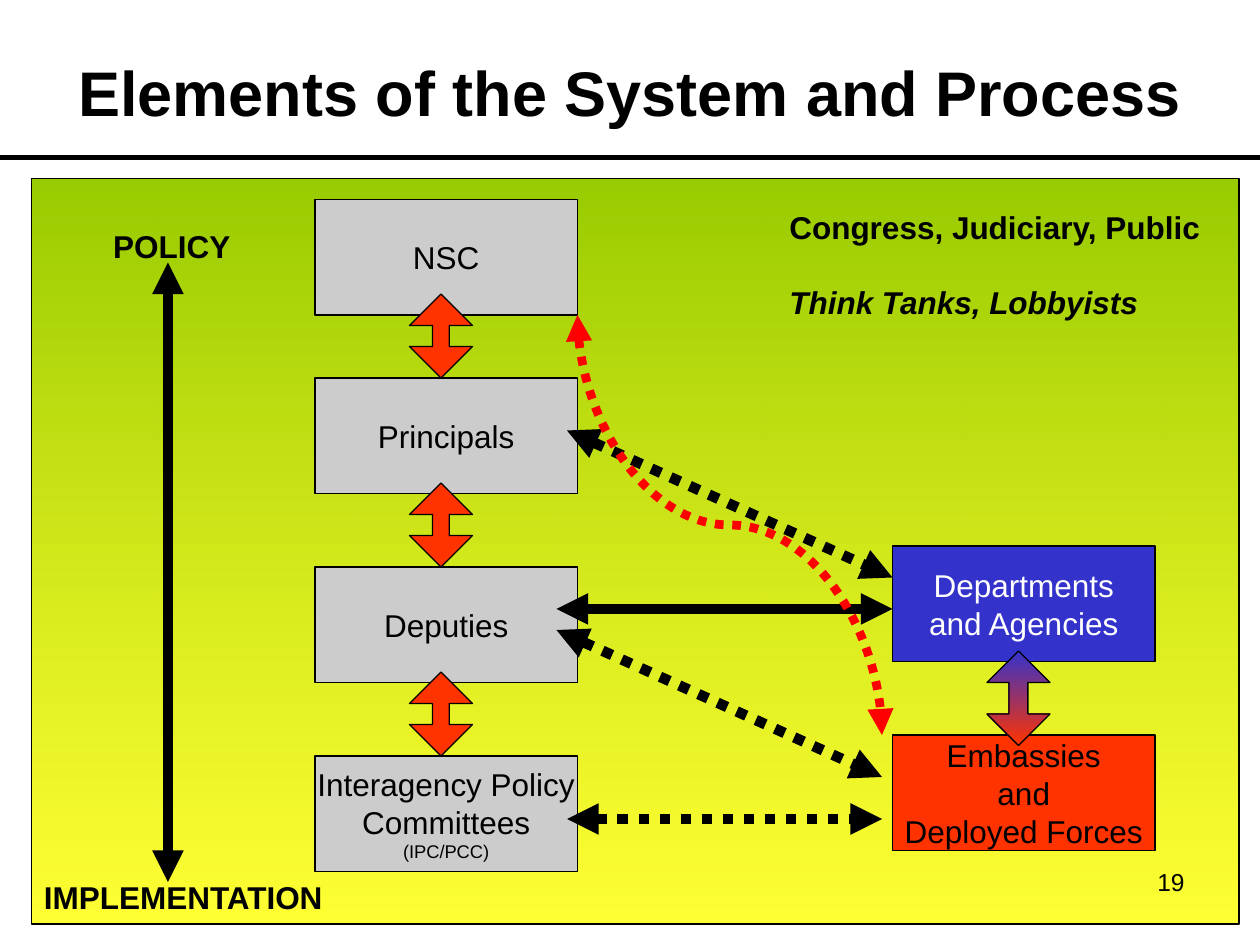
from lxml import etree
from pptx import Presentation
from pptx.dml.color import RGBColor
from pptx.enum import dml, shapes, text
from pptx.oxml.ns import qn
from pptx.util import Pt

FONT = "Arial"
BLACK = RGBColor(0x00, 0x00, 0x00)
WHITE = RGBColor(0xFF, 0xFF, 0xFF)
GREY = RGBColor(0xCC, 0xCC, 0xCC)
GREEN = RGBColor(0x99, 0xCC, 0x00)
YELLOW = RGBColor(0xFF, 0xFF, 0x00)
BLUE = RGBColor(0x33, 0x33, 0xCC)
ORANGE = RGBColor(0xFF, 0x33, 0x00)
RED = RGBColor(0xFF, 0x00, 0x00)

RECT = shapes.MSO_SHAPE.RECTANGLE
UP_DOWN = shapes.MSO_SHAPE.UP_DOWN_ARROW
STRAIGHT = shapes.MSO_CONNECTOR.STRAIGHT
CENTER = text.PP_ALIGN.CENTER


def set_font(p, size, color=BLACK, bold=False, italic=False):
    f = p.font
    f.name, f.size, f.bold, f.italic = FONT, Pt(size), bold, italic
    f.color.rgb = color


def add_shape(s, kind, x, y, w, h, *colors):
    """One colour gives a solid fill, two a top-to-bottom gradient."""
    sp = s.shapes.add_shape(kind, Pt(x), Pt(y), Pt(w), Pt(h))
    sp.shadow.inherit = False
    if len(colors) == 1:
        sp.fill.solid()
        sp.fill.fore_color.rgb = colors[0]
    else:
        sp.fill.gradient()
        sp.fill.gradient_angle = 270
        for stop, color in zip(sp.fill.gradient_stops, colors):
            stop.color.rgb = color
    sp.line.color.rgb = BLACK
    sp.line.width = Pt(0.75)
    return sp


def add_box(s, x, y, lines, fill, color=BLACK):
    sp = add_shape(s, RECT, x, y, 150, 66, fill)
    tf = sp.text_frame
    tf.word_wrap = False
    tf.vertical_anchor = text.MSO_ANCHOR.MIDDLE
    tf.text = "\n".join(lines)
    for p in tf.paragraphs:
        p.alignment = CENTER
        set_font(p, 18, color)
    return sp


def add_double_arrow(s, x, y, h, head, *colors):
    sp = add_shape(s, UP_DOWN, x, y, 36, h, *colors)
    sp.adjustments[0] = 0.5
    sp.adjustments[1] = head


def add_label(s, x, y, w, h, lines, size=18, bold=True):
    tf = s.shapes.add_textbox(Pt(x), Pt(y), Pt(w), Pt(h)).text_frame
    tf.word_wrap = False
    tf.text = "\n".join(lines)
    for p in tf.paragraphs:
        set_font(p, size, bold=bold)
    return tf


def add_line(s, x1, y1, x2, y2, width=6, color=BLACK, dotted=False,
             heads=True, kind=STRAIGHT):
    cn = s.shapes.add_connector(kind, Pt(x1), Pt(y1), Pt(x2), Pt(y2))
    cn.line.color.rgb = color
    cn.line.width = Pt(width)
    if dotted:
        cn.line.dash_style = dml.MSO_LINE.ROUND_DOT
    sp_pr = cn._element.spPr
    if heads:
        for end in ("a:headEnd", "a:tailEnd"):
            etree.SubElement(sp_pr.find(qn("a:ln")), qn(end), type="triangle")
    etree.SubElement(sp_pr, qn("a:effectLst"))
    return cn


def add_title(s, title):
    sp = s.shapes.title
    sp.left, sp.top, sp.width, sp.height = Pt(36), Pt(7.2), Pt(648), Pt(90)
    tf = sp.text_frame
    tf.text = title
    tf.vertical_anchor = text.MSO_ANCHOR.MIDDLE
    p = tf.paragraphs[0]
    p.alignment = CENTER
    set_font(p, 36, bold=True)


def main():
    prs = Presentation()
    prs.slide_width, prs.slide_height = Pt(720), Pt(540)
    s = prs.slides.add_slide(prs.slide_layouts[5])

    # Title, rule and background panel
    add_title(s, "Elements of the System and Process")
    panel = add_shape(s, RECT, 18, 102, 690, 426, GREEN, YELLOW)
    last_color = list(panel._element.spPr.iter(qn("a:srgbClr")))[1]
    etree.SubElement(last_color, qn("a:alpha"), val="80000")
    add_line(s, 0, 90, 720, 90, width=3, heads=False)

    # Policy levels
    levels = [(114, ["NSC"]), (216, ["Principals"]), (324, ["Deputies"]),
              (432, ["Interagency Policy", "Committees", "(IPC/PCC)"])]
    for y, lines in levels:
        box = add_box(s, 180, y, lines, GREY)
    box.text_frame.paragraphs[2].font.size = Pt(10.5)
    for i in range(3):
        add_double_arrow(s, 234, 168 + 108 * i, 48, 0.267, ORANGE)

    # Implementing bodies
    add_box(s, 510, 312, ["Departments", "and Agencies"], BLUE, WHITE)
    add_box(s, 510, 420, ["Embassies", "and", "Deployed Forces"], ORANGE)
    add_double_arrow(s, 564, 372, 54, 0.3, BLUE, ORANGE)

    # Links between levels and bodies
    add_line(s, 318, 348, 510, 348)
    for ends in [(318, 360, 504, 444), (324, 468, 504, 468),
                 (324, 246, 510, 330)]:
        add_line(s, *ends, dotted=True)

    # Policy to implementation axis
    add_line(s, 96, 504, 96, 150)
    add_label(s, 57.6, 126, 81.4, 28.8, ["POLICY"])
    add_label(s, 18, 498, 176.4, 28.8, ["IMPLEMENTATION"])

    # Outside influences
    tf = add_label(s, 444, 115.2, 257.8, 72.7,
                   ["Congress, Judiciary, Public", "Think Tanks, Lobbyists"])
    tf.paragraphs[1].space_before = Pt(21.6)
    tf.paragraphs[1].font.italic = True

    # Curved link, turned so that it leaves and arrives vertically
    curve = add_line(s, 537, 213, 297, 387, width=5, color=RED, dotted=True,
                     kind=shapes.MSO_CONNECTOR.CURVE)
    curve._element.spPr.find(qn("a:xfrm")).set("rot", str(270 * 60000))

    # Slide number
    tf = add_label(s, 516, 492, 168, 37.5, ["19"], size=14, bold=False)
    tf.word_wrap = True
    tf.paragraphs[0].alignment = text.PP_ALIGN.RIGHT

    prs.save("out.pptx")


if __name__ == "__main__":
    main()
